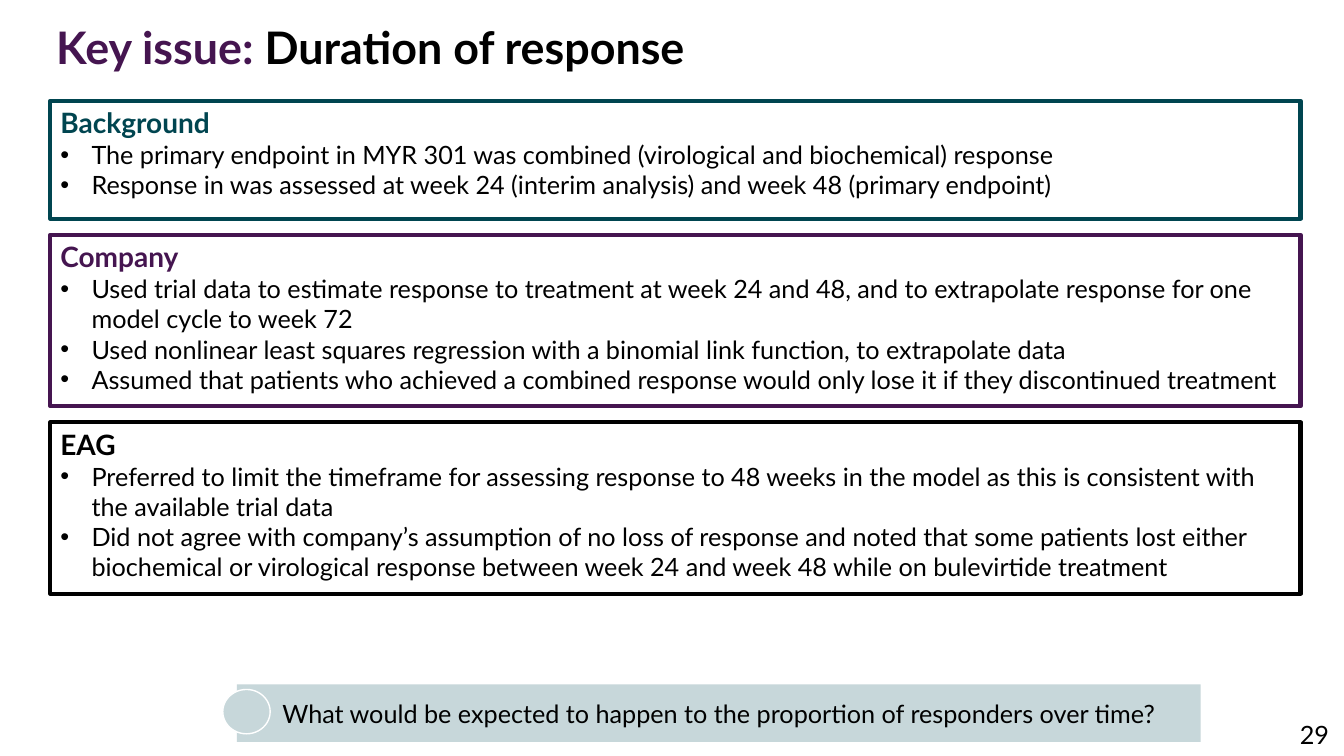
from lxml import etree
from pptx import Presentation
from pptx.dml.color import RGBColor
from pptx.enum import shapes, text
from pptx.oxml.ns import qn
from pptx.util import Inches, Pt

PURPLE, TEAL, BLACK, WHITE, PALE = "451550", "004550", "000000", "FFFFFF", "C7D7DA"


def color(value):
    return RGBColor.from_string(value)


def add_run(paragraph, words, size, ink=BLACK, bold=False):
    run = paragraph.add_run()
    run.text = words
    run.font.name = "Lato"
    run.font.size = Pt(size)
    run.font.bold = bold
    run.font.color.rgb = color(ink)


presentation = Presentation()
presentation.slide_width = Inches(13.33)
presentation.slide_height = Inches(7.5)
slide = presentation.slides.add_slide(presentation.slide_layouts[6])

# Title and page number
title = slide.shapes.add_textbox(Inches(0.46), Inches(0.21), Inches(12.44), Inches(0.46))
title.text_frame.word_wrap = True
paragraph = title.text_frame.paragraphs[0]
paragraph.line_spacing = 0.9
add_run(paragraph, "Key issue: ", 32, PURPLE, True)
add_run(paragraph, "Duration of response", 32, BLACK, True)

page_number = slide.shapes.add_textbox(Inches(11.44), Inches(7.09), Inches(1.84), Inches(0.4))
page_number.text_frame.word_wrap = True
paragraph = page_number.text_frame.paragraphs[0]
paragraph.alignment = text.PP_ALIGN.RIGHT
add_run(paragraph, "29", 18)

# Framed sections: heading, colour, top, height, bullets
sections = [
    ("Background", TEAL, 1, 1.17, [
        "The primary endpoint in MYR 301 was combined (virological and biochemical) response",
        "Response in was assessed at week 24 (interim analysis) and week 48 (primary endpoint)",
    ]),
    ("Company", PURPLE, 2.33, 1.7, [
        "Used trial data to estimate response to treatment at week 24 and 48, and to extrapolate "
        "response for one model cycle to week 72",
        "Used nonlinear least squares regression with a binomial link function, to extrapolate data",
        "Assumed that patients who achieved a combined response would only lose it if they "
        "discontinued treatment",
    ]),
    ("EAG", BLACK, 4.19, 1.7, [
        "Preferred to limit the timeframe for assessing response to 48 weeks in the model as this "
        "is consistent with the available trial data",
        "Did not agree with company’s assumption of no loss of response and noted that some "
        "patients lost either biochemical or virological response between week 24 and week 48 "
        "while on bulevirtide treatment",
    ]),
]
for heading, accent, top, height, bullets in sections:
    section = slide.shapes.add_shape(
        shapes.MSO_SHAPE.RECTANGLE, Inches(0.5), Inches(top), Inches(12.4), Inches(height))
    section.shadow.inherit = False
    section.fill.background()
    section.line.color.rgb = color(accent)
    section.line.width = Pt(3)
    frame = section.text_frame
    frame.word_wrap = True
    frame.vertical_anchor = text.MSO_ANCHOR.TOP
    paragraph = frame.paragraphs[0]
    paragraph.alignment = text.PP_ALIGN.LEFT
    add_run(paragraph, heading, 20, accent, True)
    for bullet in bullets:
        paragraph = frame.add_paragraph()
        paragraph.alignment = text.PP_ALIGN.LEFT
        properties = paragraph._p.get_or_add_pPr()
        properties.set("marL", str(Inches(0.31)))
        properties.set("indent", str(-Inches(0.31)))
        etree.SubElement(properties, qn("a:buFont")).set("typeface", "Arial")
        etree.SubElement(properties, qn("a:buChar")).set("char", "•")
        add_run(paragraph, bullet, 18)

# Question bar with its round marker
question = slide.shapes.add_shape(
    shapes.MSO_SHAPE.RECTANGLE, Inches(2.35), Inches(6.79), Inches(9.56), Inches(0.57))
marker = slide.shapes.add_shape(
    shapes.MSO_SHAPE.OVAL, Inches(2.21), Inches(6.84), Inches(0.47), Inches(0.44))
for shape in (question, marker):
    shape.shadow.inherit = False
    shape.fill.solid()
    shape.fill.fore_color.rgb = color(PALE)
question.line.fill.background()
marker.line.color.rgb = color(WHITE)
marker.line.width = Pt(1)
question.text_frame.word_wrap = True
question.text_frame.vertical_anchor = text.MSO_ANCHOR.MIDDLE
paragraph = question.text_frame.paragraphs[0]
paragraph.alignment = text.PP_ALIGN.CENTER
add_run(paragraph, "What would be expected to happen to the proportion of responders over time?", 18)

presentation.save("out.pptx")
